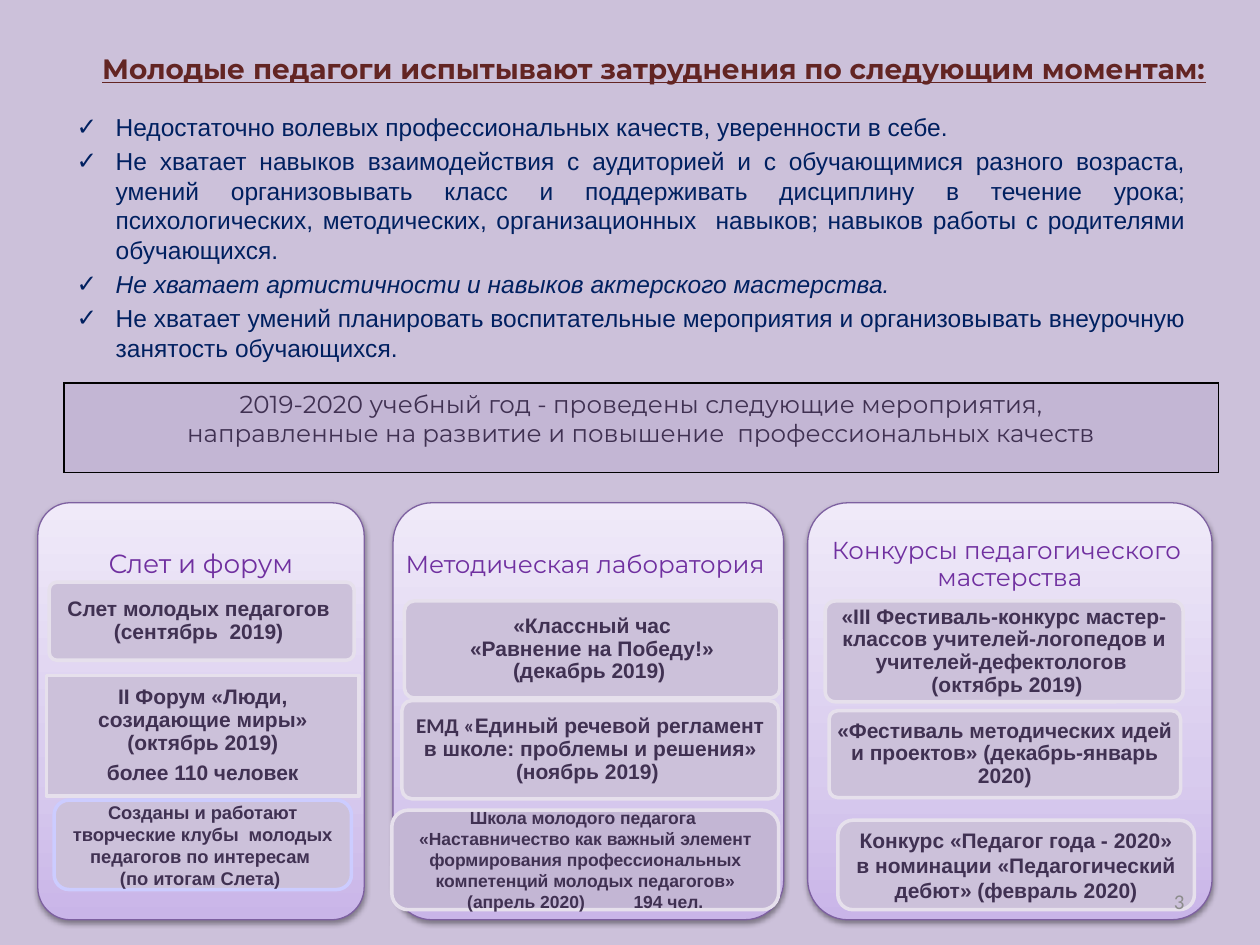
from pptx import Presentation
from pptx.dml.color import RGBColor
from pptx.enum.shapes import MSO_SHAPE
from pptx.enum.text import MSO_ANCHOR, PP_ALIGN
from pptx.oxml import parse_xml
from pptx.util import Pt
from lxml.etree import SubElement

PX = 9144
NS = "http://schemas.openxmlformats.org/drawingml/2006/main"
INK, LILAC, MAUVE, PALE = "403152", "CCC1DA", "C3B6D4", "E6E0EC"


def px(*vals):
    return [v * PX for v in vals]


def rgb(code):
    return RGBColor.from_string(code)


def node(up, tag, **attrs):
    return SubElement(up, f"{{{NS}}}{tag}", {k: str(v) for k, v in attrs.items()})


def say(frame, paras, size, color, font="Arial", align=PP_ALIGN.CENTER,
        lead=None, before=0, after=0, **style):
    frame.word_wrap = True
    for i, runs in enumerate(paras):
        para = frame.add_paragraph() if i else frame.paragraphs[0]
        para.alignment = align
        para.space_before, para.space_after = Pt(before), Pt(after)
        if lead:
            para.line_spacing = lead
        for item in [runs] if isinstance(runs, str) else runs:
            text, more = (item, {}) if isinstance(item, str) else item
            run = para.add_run()
            run.text = text
            run.font.size = Pt(size)
            run.font.color.rgb = rgb(color)
            for key, val in {"name": font, **style, **more}.items():
                setattr(run.font, key, val)


def label(slide, box, paras, size, color, pad=None, anchor=MSO_ANCHOR.TOP, **style):
    frame = slide.shapes.add_textbox(*px(*box)).text_frame
    frame.vertical_anchor = anchor
    if pad:
        inset(frame, pad)
    say(frame, paras, size, color, **style)
    return frame


def inset(frame, pad):
    for side in ("left", "top", "right", "bottom"):
        setattr(frame, f"margin_{side}", pad * PX)


def block(slide, box, kind, edge, width, fill=None, curve=None):
    shape = slide.shapes.add_shape(kind, *px(*box))
    shape.shadow.inherit = False
    shape.line.color.rgb = rgb(edge)
    shape.line.width = Pt(width)
    if fill:
        shape.fill.solid()
        shape.fill.fore_color.rgb = rgb(fill)
    if curve:
        shape.adjustments[0] = curve
    return shape


def tile(slide, box, paras, kind=MSO_SHAPE.ROUNDED_RECTANGLE, after=0):
    curve = 0.1 if kind == MSO_SHAPE.ROUNDED_RECTANGLE else None
    frame = block(slide, box, kind, PALE, 2, LILAC, curve).text_frame
    frame.vertical_anchor = MSO_ANCHOR.MIDDLE
    inset(frame, 3)
    say(frame, paras, 12, INK, lead=0.9, after=after, bold=True)


def note(slide, box, paras, size=12, fill=LILAC, edge=PALE, tab=None):
    shape = block(slide, box, MSO_SHAPE.ROUNDED_RECTANGLE, edge, 2, fill)
    frame = shape.text_frame
    frame.vertical_anchor = MSO_ANCHOR.MIDDLE
    say(frame, paras, size, INK, bold=True)
    if tab:
        tabs = node(frame.paragraphs[0]._p.get_or_add_pPr(), "tabLst")
        node(tabs, "tab", pos=tab * PX, algn="l")


def card(slide, box):
    shape = block(slide, box, MSO_SHAPE.ROUNDED_RECTANGLE, "7D60A0", 0.75, curve=0.1)
    stops = ((0, "C9B5E8"), (35, "D8CBEE"), (100, "F0EAF9"))
    marks = "".join(f'<a:gs pos="{p * 1000}"><a:srgbClr val="{c}"/></a:gs>' for p, c in stops)
    props = shape._element.spPr
    props.find(f"{{{NS}}}prstGeom").addnext(parse_xml(
        f'<a:gradFill xmlns:a="{NS}" rotWithShape="1"><a:gsLst>{marks}</a:gsLst>'
        '<a:lin ang="16200000" scaled="0"/></a:gradFill>'))
    glow = node(props.find(f"{{{NS}}}effectLst"), "outerShdw", blurRad=Pt(3.1),
                dist=Pt(1.6), dir=5400000, rotWithShape=0)
    node(node(glow, "srgbClr", val="000000"), "alpha", val=38000)


def panel(slide, box, head, size, tiles, last):
    left, top, wide, _ = box

    def place(part):
        return (left + part[0], top + part[1], *part[2:])

    card(slide, box)
    label(slide, (left, top, wide, 99), [head], size, "7030A0", pad=6,
          anchor=MSO_ANCHOR.MIDDLE, font="Montserrat", lead=0.9, after=size * 0.35)
    for part, paras, opts in tiles:
        tile(slide, place(part), paras, **opts)
    part, paras, opts = last
    note(slide, place(part), paras, **opts)


def points(slide, box, paras):
    frame = label(slide, box, paras, 14, "002060", align=PP_ALIGN.JUSTIFY, before=2.8)
    for para in frame.paragraphs:
        props = para._p.get_or_add_pPr()
        props.set("marL", str(31 * PX))
        props.set("indent", str(-31 * PX))
        node(props, "buFont", typeface="Arial")
        node(props, "buChar", char="✓")


def banner(slide, box, paras):
    table = slide.shapes.add_table(1, 1, *px(*box)).table
    table.first_row = table.horz_banding = False
    cell = table.cell(0, 0)
    say(cell.text_frame, paras, 14, INK, font="Montserrat")
    props = cell._tc.get_or_add_tcPr()
    for side in ("lnL", "lnR", "lnT", "lnB"):
        line = node(props, side, w=Pt(1))
        node(node(line, "solidFill"), "srgbClr", val="000000")
    cell.fill.solid()
    cell.fill.fore_color.rgb = rgb(MAUVE)


def main():
    deck = Presentation()
    deck.slide_width, deck.slide_height = px(1000, 750)
    slide = deck.slides.add_slide(deck.slide_layouts[6])
    slide.background.fill.solid()
    slide.background.fill.fore_color.rgb = rgb(LILAC)

    points(slide, (51, 84, 900, 216), [
        "Недостаточно волевых профессиональных качеств, уверенности в себе.",
        "Не хватает навыков взаимодействия с аудиторией и с обучающимися разного возраста, "
        "умений организовывать класс и поддерживать дисциплину в течение урока; "
        "психологических, методических, организационных  навыков; "
        "навыков работы с родителями обучающихся.",
        [("Не хватает артистичности и навыков актерского мастерства.", {"italic": True})],
        "Не хватает умений планировать воспитательные мероприятия и организовывать "
        "внеурочную занятость обучающихся."])
    label(slide, (19, 36, 1000, 37),
          ["Молодые педагоги испытывают затруднения по следующим моментам:"],
          16, "632523", font="Montserrat", bold=True, underline=True)
    banner(slide, (51, 304, 916, 71), [
        "2019-2020 учебный год - проведены следующие мероприятия,",
        "направленные на развитие и повышение  профессиональных качеств"])

    panel(slide, (30, 399, 259, 331), "Слет и форум", 15, [
        ((7, 137, 248, 96),
         ["II Форум «Люди, созидающие миры» (октябрь 2019)", "более 110 человек"],
         {"kind": MSO_SHAPE.RECTANGLE, "after": 4.2}),
        ((9, 63, 242, 62), ["Слет молодых педагогов ", "(сентябрь  2019) "], {}),
    ], ((13, 236, 236, 71),
        ["Созданы и работают творческие клубы  молодых педагогов по интересам ",
         "(по итогам Слета) "], {"size": 10.5, "edge": "CCCCFF"}))

    panel(slide, (312, 399, 310, 331), "Методическая лаборатория ", 14, [
        ((9, 78, 298, 77),
         ["«Классный час", "«Равнение на Победу!»", "(декабрь 2019) "], {}),
        ((7, 157, 299, 78),
         [[("ЕМД «", {"name": "Calibri"}),
           "Единый речевой регламент в школе: проблемы и решения» (ноябрь 2019) "]],
         {"after": 4.2}),
    ], ((-1, 244, 307, 79),
        ["Школа молодого педагога  «Наставничество как важный элемент формирования "
         "профессиональных компетенций молодых педагогов» (апрель 2020)\t194 чел."],
        {"size": 10, "fill": MAUVE, "tab": 132}))

    panel(slide, (641, 399, 321, 331), "Конкурсы педагогического  мастерства", 14, [
        ((14, 78, 284, 80),
         ["«III Фестиваль-конкурс мастер-классов учителей-логопедов и "
          "учителей-дефектологов ", " (октябрь 2019)"], {}),
        ((17, 165, 279, 69),
         ["«Фестиваль методических идей и проектов» (декабрь-январь 2020)"],
         {"after": 4.2}),
    ], ((24, 252, 283, 71),
        ["Конкурс «Педагог года - 2020» в номинации «Педагогический дебют» "
         "(февраль 2020)"], {}))

    label(slide, (717, 695, 233, 40), ["3"], 12, "8C8C8C", anchor=MSO_ANCHOR.MIDDLE,
          font="Calibri", align=PP_ALIGN.RIGHT)
    deck.save("out.pptx")


if __name__ == "__main__":
    main()
